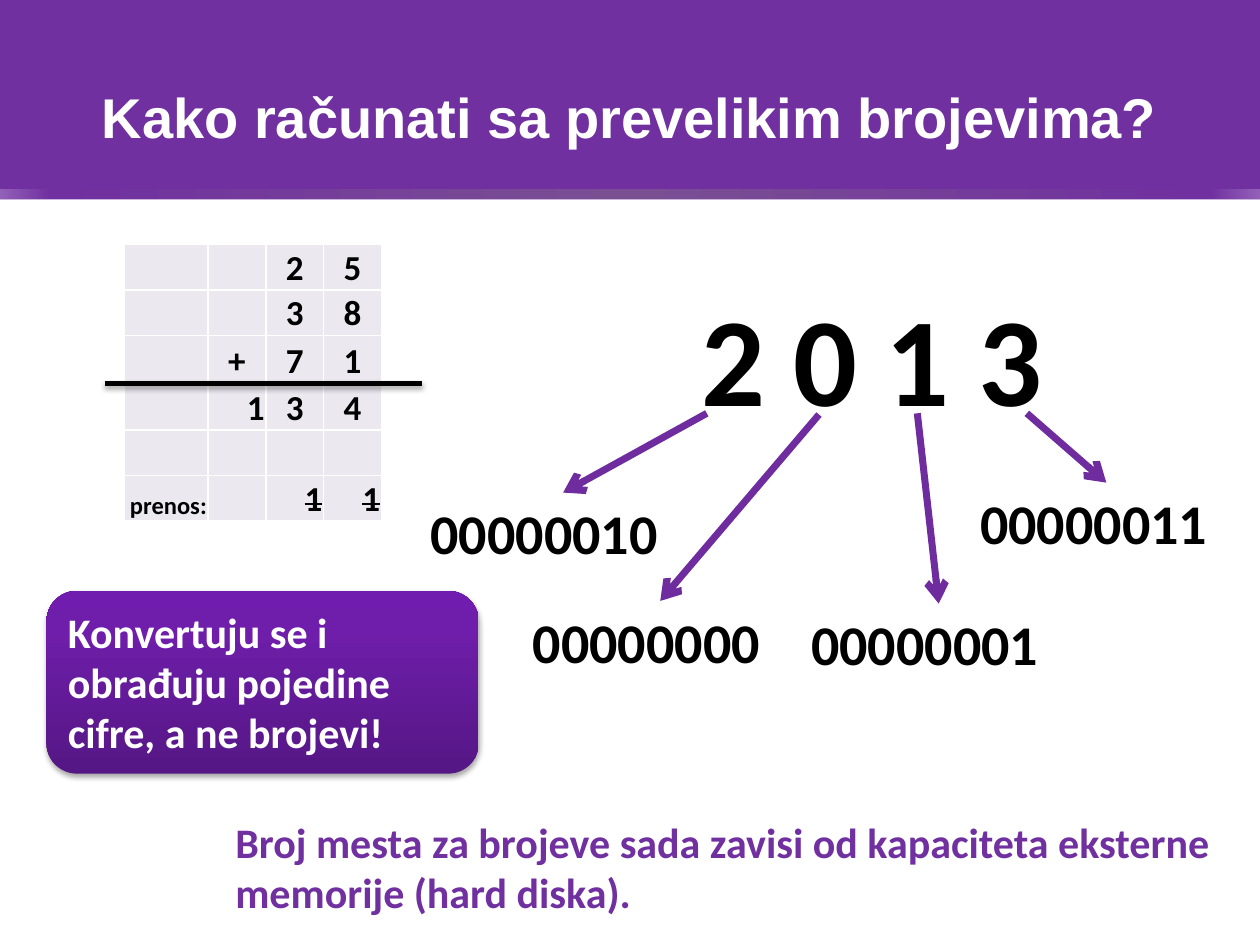
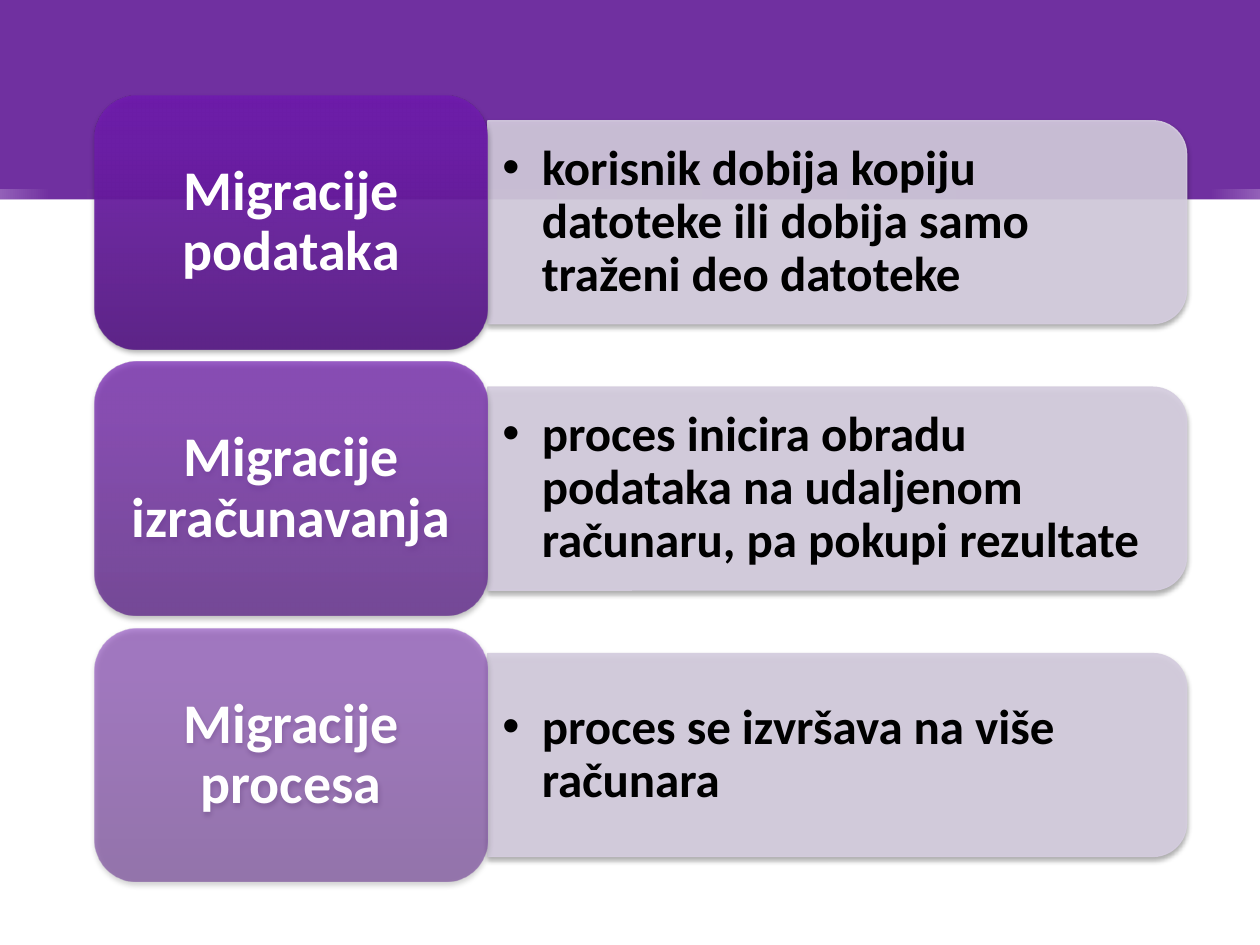
from lxml.etree import SubElement as Sub
from pptx import Presentation
from pptx.dml.color import RGBColor
from pptx.enum.shapes import MSO_CONNECTOR as Link, MSO_SHAPE as Preset
from pptx.enum.text import MSO_ANCHOR as Anchor, PP_ALIGN as Align
from pptx.oxml.ns import qn
from pptx.util import Pt

COLOURS = {
    "purple": "7030A0", "arrow": "6E2C9F", "white": "FFFFFF", "black": "000000",
    "cell": "EBE8F0", "bar": "D5CDDF", "dark": "551784", "middle": "6F1EAB",
    "bright": "701CAF", "edge": "9360B8", "strip": "7A4F92",
}
BODY, HEADING = "Calibri", "Arial"
WIDTH, HEIGHT = 720, 540
BAND = 114
STRIP = 6
PANEL_STOPS = [(0, "dark"), (80, "middle"), (100, "bright")]
STRIP_STOPS = [(0, "edge"), (4, "purple"), (50, "strip"), (96, "purple"), (100, "edge")]


def rgb(name):
    return RGBColor.from_string(COLOURS[name])


def add_colour(parent, name, alpha=100):
    colour = Sub(parent, qn("a:srgbClr"), val=COLOURS[name])
    if alpha < 100:
        Sub(colour, qn("a:alpha"), val=str(alpha * 1000))


class SlideBuilder:
    def __init__(self):
        self.deck = Presentation()
        self.deck.slide_width, self.deck.slide_height = Pt(WIDTH), Pt(HEIGHT)
        self.page = None

    def add_page(self, title=None):
        first = self.page is None
        self.page = self.deck.slides.add_slide(self.deck.slide_layouts[5 if title else 6])
        if first:
            self.add_band()
        if title:
            holder = self.page.shapes.title
            holder.left, holder.top, holder.width, holder.height = Pt(36), Pt(21.6), Pt(648), Pt(90)
            self.set_text(holder.text_frame, title, 32, "white", Align.CENTER, Anchor.MIDDLE, font=HEADING)

    def add_band(self):
        band = self.shape(Preset.RECTANGLE, 0, 0, WIDTH, BAND, "purple")
        strip = self.shape(Preset.RECTANGLE, 0, BAND - STRIP, WIDTH, STRIP)
        self.gradient(strip, STRIP_STOPS, 0)
        tree = self.deck.slide_master.shapes.element
        for index, part in enumerate((band, strip)):
            part.element.nvSpPr.cNvPr.id = 100 + index
            tree.insert(2 + index, part.element)

    def set_text(self, frame, text, size, colour="black", align=Align.LEFT,
                 anchor=Anchor.TOP, insets=(7.2, 3.6), font=BODY, spacing=None, bullet=None):
        frame.word_wrap = True
        frame.vertical_anchor = anchor
        frame.margin_left = frame.margin_right = Pt(insets[0])
        frame.margin_top = frame.margin_bottom = Pt(insets[1])
        para = frame.paragraphs[0]
        para.text = text
        if bullet:
            props = para._p.get_or_add_pPr()
            props.set("marL", str(Pt(bullet)))
            props.set("indent", str(-Pt(bullet)))
            Sub(props, qn("a:buFont"), typeface="Arial")
            Sub(props, qn("a:buChar"), char="•")
        para.alignment = align
        if spacing:
            para.line_spacing = spacing
        self.style(para.font, size, colour, font)

    def style(self, target, size, colour, font=BODY):
        target.name, target.size, target.bold = font, Pt(size), True
        target.color.rgb = rgb(colour)

    def text(self, left, top, width, height, text, size, **options):
        box = self.page.shapes.add_textbox(Pt(left), Pt(top), Pt(width), Pt(height))
        self.set_text(box.text_frame, text, size, **options)

    def shape(self, preset, left, top, width, height, fill=None):
        shape = self.page.shapes.add_shape(preset, Pt(left), Pt(top), Pt(width), Pt(height))
        shape.shadow.inherit = False
        shape.line.fill.background()
        if fill:
            shape.fill.solid()
            shape.fill.fore_color.rgb = rgb(fill)
        return shape

    def gradient(self, shape, stops, angle, alpha=100):
        shape.fill.background()
        props = shape.element.spPr
        blank = props.find(qn("a:noFill"))
        fill = props.makeelement(qn("a:gradFill"), {"rotWithShape": "1"})
        stop_list = Sub(fill, qn("a:gsLst"))
        for position, name in stops:
            add_colour(Sub(stop_list, qn("a:gs"), pos=str(position * 1000)), name, alpha)
        Sub(fill, qn("a:lin"), ang=str(angle * 60000), scaled="0")
        props.replace(blank, fill)

    def shadow(self, shape):
        effects = shape.element.spPr.find(qn("a:effectLst"))
        outer = Sub(effects, qn("a:outerShdw"), blurRad=str(Pt(3.1)), dist=str(Pt(1.8)),
                    dir="5400000", rotWithShape="0")
        add_colour(outer, "black", 35)

    def panel(self, left, top, width, height, text, size, alpha=100, **options):
        panel = self.shape(Preset.ROUNDED_RECTANGLE, left, top, width, height)
        self.gradient(panel, PANEL_STOPS, 270, alpha)
        self.shadow(panel)
        self.set_text(panel.text_frame, text, size, "white", **options)

    def bar(self, left, top, width, height):
        offset = (width - height) / 2
        bar = self.shape(Preset.ROUND_2_SAME_RECTANGLE, left + offset, top - offset, height, width, "bar")
        bar.rotation = 90
        bar.line.color.rgb = rgb("bar")
        bar.line.width = Pt(0.75)
        for colour in bar.element.spPr.iter(qn("a:srgbClr")):
            Sub(colour, qn("a:alpha"), val="90000")
        self.shadow(bar)

    def line(self, start, end, colour, width, arrow=False, shadow=False):
        line = self.page.shapes.add_connector(Link.STRAIGHT, *map(Pt, start + end))
        line.line.color.rgb = rgb(colour)
        line.line.width = Pt(width)
        if arrow:
            Sub(line.line._get_or_add_ln(), qn("a:tailEnd"), type="arrow")
        Sub(line.element.spPr, qn("a:effectLst"))
        if shadow:
            self.shadow(line)

    def sum_table(self, left, top, widths, heights, rows):
        frame = self.page.shapes.add_table(len(rows), len(widths), Pt(left), Pt(top),
                                           Pt(sum(widths)), Pt(sum(heights)))
        table = frame.table
        table.first_row = table.horz_banding = False
        for column, width in zip(table.columns, widths):
            column.width = Pt(width)
        for row, height, values in zip(table.rows, heights, rows):
            row.height = Pt(height)
            for cell, value in zip(row.cells, values):
                self.cell(cell, value)

    def cell(self, cell, value):
        text = value.strip("<~")
        cell.margin_left = cell.margin_right = cell.margin_top = Pt(0.7)
        cell.margin_bottom = 0
        cell.vertical_anchor = Anchor.BOTTOM
        para = cell.text_frame.paragraphs[0]
        para.text = text
        para.alignment = Align.RIGHT if value != text else Align.CENTER
        self.style(para.font, 14 if len(text) > 1 else 20, "black")
        if value.startswith("~"):
            para.runs[0].font._element.set("strike", "sngStrike")
        props = cell._tc.get_or_add_tcPr()
        for side in ("lnL", "lnR", "lnT", "lnB"):
            border = Sub(props, qn(f"a:{side}"), w=str(Pt(1)))
            add_colour(Sub(border, qn("a:solidFill")), "white")
        cell.fill.solid()
        cell.fill.fore_color.rgb = rgb("cell")
        props.append(props.find(qn("a:solidFill")))


def build_big_numbers(slides):
    slides.add_page("Kako računati sa prevelikim brojevima?")
    rows = [
        ("", "", "2", "5"),
        ("", "", "3", "8"),
        ("", "+", "7", "1"),
        ("", "<1", "3", "4"),
        ("", "", "", ""),
        ("<prenos:", "", "~1", "~1"),
    ]
    slides.sum_table(70.9, 139.7, (48, 33, 33, 33), (26, 26, 27, 27, 26, 26), rows)
    slides.line((59.8, 219), (241.2, 219), "black", 3, shadow=True)
    slides.text(393.8, 157, 215.3, 94.3, "2 0 1 3", 72)
    codes = [
        ("00000010", 239, 281.5, (403.9, 236.2), (321.8, 281.5)),
        ("00000000", 297.4, 343.4, (468, 236.9), (377.3, 343.4)),
        ("00000001", 456.5, 344.9, (524.2, 236.2), (536.4, 344.9)),
        ("00000011", 553, 275.8, (586.8, 236.2), (632.2, 275.8)),
    ]
    for code, left, top, start, end in codes:
        slides.text(left, top, 162, 46, code, 32)
        slides.line(start, end, "arrow", 4, arrow=True)
    slides.panel(26.6, 337.7, 247, 104.4, "Konvertuju se i obrađuju pojedine cifre, a ne brojevi!", 24)
    slides.text(127.4, 463, 575.3, 65.5,
                "Broj mesta za brojeve sada zavisi od kapaciteta eksterne memorije (hard diska).",
                24, colour="purple")


def build_migrations(slides):
    slides.add_page()
    migrations = [
        ("Migracije podataka", "korisnik dobija kopiju datoteke ili dobija samo traženi deo datoteke", 90),
        ("Migracije izračunavanja",
         "proces inicira obradu podataka na udaljenom računaru, pa pokupi rezultate", 70),
        ("Migracije procesa", "proces se izvršava na više računara", 50),
    ]
    left, top, name_width, name_height = 54, 54.5, 224.7, 145
    bar_left, bar_width, bar_height = left + name_width, 399.4, 0.8 * name_height
    for index, (name, detail, alpha) in enumerate(migrations):
        name_top = top + index * 1.05 * name_height
        bar_top = name_top + (name_height - bar_height) / 2
        slides.bar(bar_left, bar_top, bar_width, bar_height)
        slides.text(bar_left, bar_top + 5.6, bar_width - 5.6, bar_height - 11.2, detail, 28,
                    anchor=Anchor.MIDDLE, insets=(8.4, 4.2), spacing=0.9, bullet=22.5)
        slides.panel(left, name_top, name_width, name_height, name, 32, alpha,
                     align=Align.CENTER, anchor=Anchor.MIDDLE, insets=(9.6, 4.8), spacing=0.9)


def main():
    slides = SlideBuilder()
    build_big_numbers(slides)
    build_migrations(slides)
    slides.deck.save("out.pptx")


if __name__ == "__main__":
    main()
